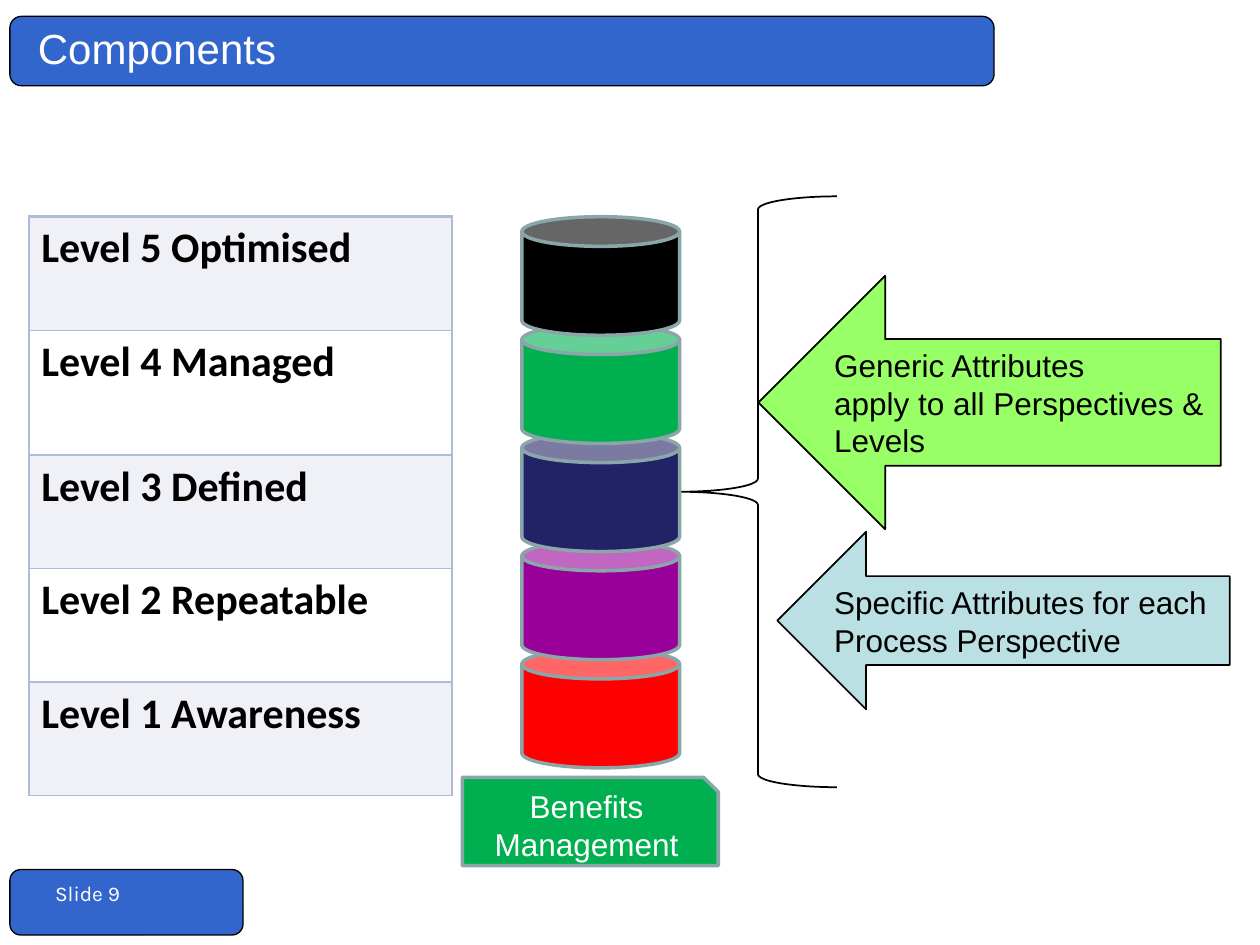
"""Builds the Components slide: maturity levels, a stack of cylinders and attribute arrows."""
from lxml import etree
from pptx import Presentation
from pptx.dml.color import RGBColor
from pptx.enum.shapes import MSO_SHAPE
from pptx.enum.text import MSO_ANCHOR, PP_ALIGN
from pptx.oxml.ns import qn
from pptx.util import Cm, Pt

ROUNDED, CAN, BRACE = MSO_SHAPE.ROUNDED_RECTANGLE, MSO_SHAPE.CAN, MSO_SHAPE.LEFT_BRACE
ARROW, SNIPPED = MSO_SHAPE.LEFT_ARROW, MSO_SHAPE.SNIP_1_RECTANGLE
MIDDLE, LEFT, CENTER = MSO_ANCHOR.MIDDLE, PP_ALIGN.LEFT, PP_ALIGN.CENTER

COLORS = {
    "banner": "3366CC", "black": "000000", "white": "FFFFFF", "grid": "B0BAD9",
    "edge": "8AA6A8", "green": "00B050", "navy": "222267", "purple": "990099",
    "red": "FF0000", "lime": "99FF66", "aqua": "BBE0E3",
}
LEVELS = ["Level 5 Optimised", "Level 4 Managed", "Level 3 Defined",
          "Level 2 Repeatable", "Level 1 Awareness"]
LEVEL_HEIGHTS = [2.29, 2.51, 2.29, 2.29, 2.29]
STACK = ["black", "green", "navy", "purple", "red"]


def rgb(name):
    return RGBColor.from_string(COLORS[name])


def write(frame, text, size=18, font="Arial", color="black", bold=False, align=LEFT):
    frame.word_wrap = True
    frame.text = text
    for paragraph in frame.paragraphs:
        paragraph.alignment = align
        paragraph.font.size = Pt(size)
        paragraph.font.name = font
        paragraph.font.bold = bold
        paragraph.font.color.rgb = rgb(color)


class SlideBuilder:
    def __init__(self, slide):
        self.slide = slide
        self.shapes = slide.shapes

    def title(self, text, *box):
        heading = self.shapes.title
        heading.left, heading.top, heading.width, heading.height = map(Cm, box)
        heading.text_frame.vertical_anchor = MIDDLE
        write(heading.text_frame, text, size=24, color="white")
        self.shapes.element.append(heading.element)

    def shape(self, kind, *box, fill=None, line="black", weight=1, text=None, **style):
        figure = self.shapes.add_shape(kind, *map(Cm, box))
        figure.shadow.inherit = False
        if fill:
            figure.fill.solid()
            figure.fill.fore_color.rgb = rgb(fill)
        else:
            figure.fill.background()
        figure.line.color.rgb = rgb(line)
        figure.line.width = Pt(weight)
        if text:
            figure.text_frame.vertical_anchor = MIDDLE
            write(figure.text_frame, text, **style)

    def label(self, text, *box, indent=0, **style):
        frame = self.shapes.add_textbox(*map(Cm, box)).text_frame
        frame.margin_left = Cm(indent)
        frame.vertical_anchor = MIDDLE
        write(frame, text, **style)

    def level_table(self, left, top, width):
        table = self.shapes.add_table(len(LEVELS), 1, Cm(left), Cm(top), Cm(width),
                                      Cm(sum(LEVEL_HEIGHTS))).table
        table.first_row = table.horz_banding = False
        for index, (level, height) in enumerate(zip(LEVELS, LEVEL_HEIGHTS)):
            table.rows[index].height = Cm(height)
            cell = table.cell(index, 0)
            write(cell.text_frame, level, size=24, font="Calibri", bold=True)
            self.shade(cell, index % 2 == 0)
            self.border(cell, top_weight=2 if index == 0 else 1)

    def shade(self, cell, tinted):
        if not tinted:
            cell.fill.background()
            return
        cell.fill.solid()
        cell.fill.fore_color.rgb = rgb("grid")
        color = cell._tc.tcPr.find(".//" + qn("a:srgbClr"))
        etree.SubElement(color, qn("a:alpha"), val="20000")

    def border(self, cell, top_weight):
        weights = {"a:lnL": 1, "a:lnR": 1, "a:lnT": top_weight, "a:lnB": 1}
        for position, (side, weight) in enumerate(weights.items()):
            edge = etree.Element(qn(side), w=str(Pt(weight)))
            fill = etree.SubElement(edge, qn("a:solidFill"))
            etree.SubElement(fill, qn("a:srgbClr"), val=COLORS["grid"])
            cell._tc.tcPr.insert(position, edge)


def main():
    deck = Presentation()
    deck.slide_width, deck.slide_height = Cm(25.4), Cm(19.05)
    page = SlideBuilder(deck.slides.add_slide(deck.slide_layouts[5]))

    page.shape(ROUNDED, 0.2, 0.33, 19.84, 1.4, fill="banner", weight=0.75)
    page.shape(ROUNDED, 0.2, 17.53, 4.7, 1.32, fill="banner", weight=0.75)
    page.label("Slide 9", 0, 17.53, 3.5, 0.94, indent=1.11, size=12, font="Karla",
               color="white")
    page.shape(BRACE, 13.69, 3.96, 3.18, 11.91)
    page.title("Components", 0.51, 0, 19.35, 1.93)
    page.level_table(0.58, 4.37, 8.53)

    page.shape(SNIPPED, 9.32, 15.67, 5.16, 1.78, fill="green", line="edge", weight=2,
               text="Benefits Management", color="white", align=CENTER)
    for step, color in reversed(list(enumerate(STACK))):
        page.shape(CAN, 10.52, 4.37 + step * 2.18, 3.18, 2.39, fill=color, line="edge",
                   weight=2)

    page.shape(ARROW, 15.29, 5.56, 9.32, 5.11, fill="lime",
               text="Generic Attributes\napply to all Perspectives & Levels")
    page.shape(ARROW, 15.67, 10.72, 9.12, 3.58, fill="aqua",
               text="Specific Attributes for each Process Perspective")
    deck.save("out.pptx")


if __name__ == "__main__":
    main()
